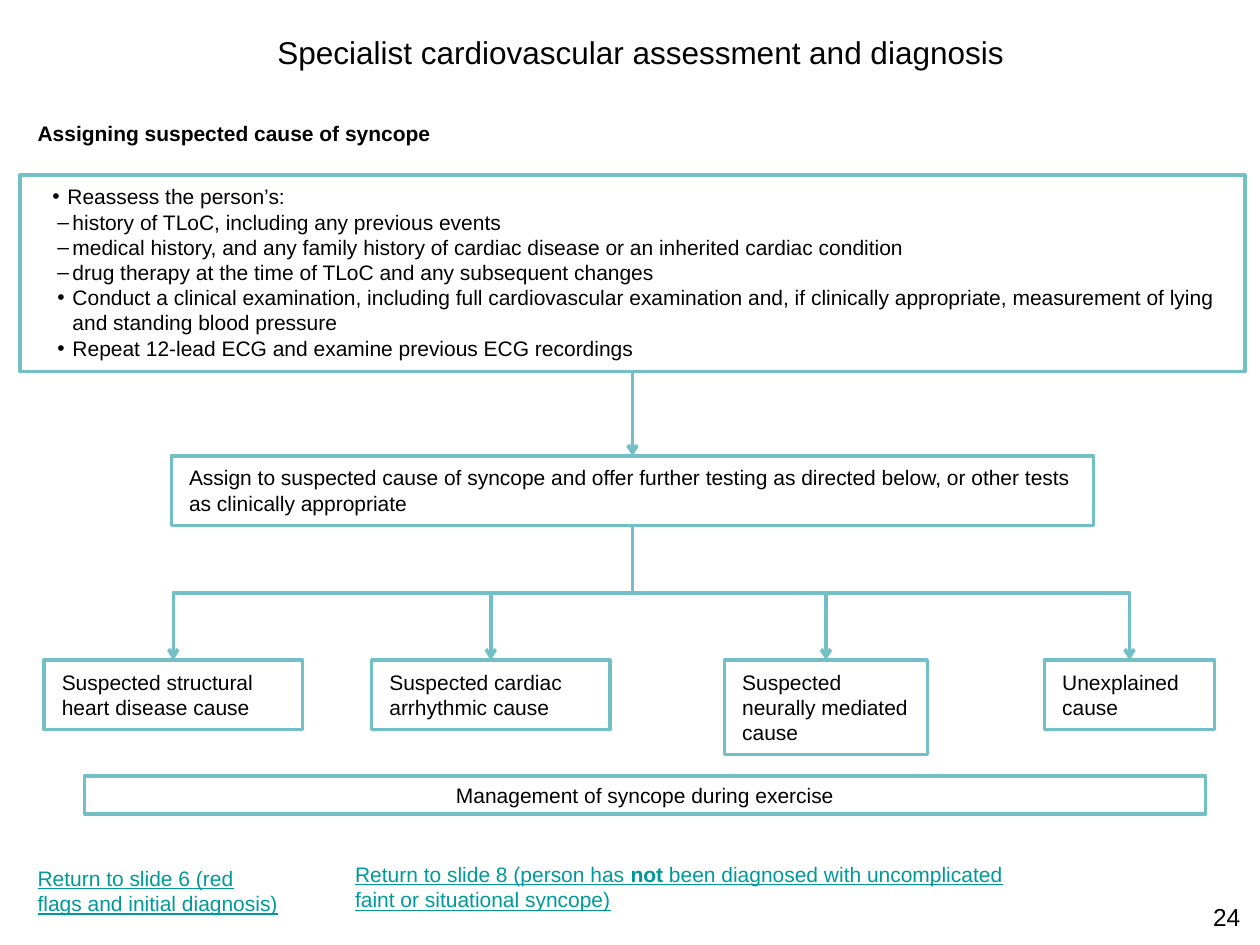
from lxml import etree
from pptx import Presentation
from pptx import util as u
from pptx.dml.color import RGBColor
from pptx.enum import shapes, text
from pptx.oxml.ns import qn

WIDTH, HEIGHT = 10, 7.5
COLORS = {"box": "FFFFFF", "line": "72BFC5", "text": "000000", "link": "009999"}
LINE_WIDTH = 2
WIDE_INSETS = (0.14, 0.07)
THIN_INSETS = (0.1, 0.05)
LEFT, CENTER = text.PP_ALIGN.LEFT, text.PP_ALIGN.CENTER

# Flow chart grid
AXIS = 5.02
LIST_TOP, LIST_HEIGHT = 1.39, 1.56
ASSIGN_TOP, CAUSE_TOP = 3.62, 5.24
TWO_LINES, THREE_LINES = 0.55, 0.75
HANGING = 0.12

STEPS = [
    ("•", 0.235, "Reassess the person’s:"),
    ("–", 0.275, "history of TLoC, including any previous events"),
    ("–", 0.275, "medical history, and any family history of cardiac disease "
                 "or an inherited cardiac condition"),
    ("–", 0.275, "drug therapy at the time of TLoC and any subsequent changes"),
    ("•", 0.275, "Conduct a clinical examination, including full cardiovascular "
                 "examination and, if clinically appropriate, measurement of "
                 "lying and standing blood pressure"),
    ("•", 0.275, "Repeat 12-lead ECG and examine previous ECG recordings"),
]
# left, width, height, wording
CAUSES = [
    (0.35, 2.05, TWO_LINES, "Suspected structural heart disease cause"),
    (2.95, 1.89, TWO_LINES, "Suspected cardiac arrhythmic cause"),
    (5.75, 1.61, THREE_LINES, "Suspected neurally mediated cause"),
    (8.29, 1.35, TWO_LINES, "Unexplained cause"),
]


def rgb(name):
    return RGBColor.from_string(COLORS[name])


def inches(*values):
    return [u.Inches(value) for value in values]


def set_place(shape, place):
    for name, value in zip(("left", "top", "width", "height"), inches(*place)):
        setattr(shape, name, value)


def set_frame(shape, insets):
    across, down = inches(*insets)
    settings = {
        "word_wrap": True,
        "auto_size": text.MSO_AUTO_SIZE.NONE,
        "vertical_anchor": text.MSO_ANCHOR.TOP,
        "margin_left": across,
        "margin_right": across,
        "margin_top": down,
        "margin_bottom": down,
    }
    for name, value in settings.items():
        setattr(shape.text_frame, name, value)


def add_run(paragraph, wording, color="text", size=12, **styles):
    run = paragraph.add_run()
    run.text = wording
    run.font.color.rgb = rgb(color)
    for name, value in {"name": "Arial", "size": u.Pt(size), **styles}.items():
        setattr(run.font, name, value)


def write(shape, runs, align=LEFT, insets=THIN_INSETS, **styles):
    """Fill a shape with one paragraph of (wording, bold) runs."""
    set_frame(shape, insets)
    paragraph = shape.text_frame.paragraphs[0]
    paragraph.alignment = align
    for wording, bold in runs:
        add_run(paragraph, wording, bold=bold, **styles)


def outline(shape):
    shape.fill.solid()
    shape.fill.fore_color.rgb = rgb("box")
    shape.line.color.rgb = rgb("line")
    shape.line.width = u.Pt(LINE_WIDTH)


def add_box(slide, place, wording, **styles):
    box = slide.shapes.add_shape(shapes.MSO_SHAPE.RECTANGLE, *inches(*place))
    box.shadow.inherit = False
    outline(box)
    write(box, [(wording, False)], **styles)


def add_label(slide, place, *runs, **styles):
    write(slide.shapes.add_textbox(*inches(*place)), runs, **styles)


def fill_list(body):
    set_place(body, (0.16, LIST_TOP, 9.72, LIST_HEIGHT))
    outline(body)
    set_frame(body, WIDE_INSETS)
    frame = body.text_frame
    for index, (mark, margin, wording) in enumerate(STEPS):
        paragraph = frame.add_paragraph() if index else frame.paragraphs[0]
        paragraph.space_before = u.Pt(0)
        add_run(paragraph, wording)
        properties = paragraph._p.get_or_add_pPr()
        properties.set("marL", str(u.Inches(margin)))
        properties.set("indent", str(-u.Inches(HANGING)))
        etree.SubElement(properties, qn("a:buFont")).set("typeface", "Arial")
        etree.SubElement(properties, qn("a:buChar")).set("char", mark)


def add_arrow(slide, kind, begin, end):
    arrow = slide.shapes.add_connector(kind, *inches(*begin, *end))
    arrow.line.color.rgb = rgb("line")
    arrow.line.width = u.Pt(LINE_WIDTH)
    etree.SubElement(arrow.line._get_or_add_ln(), qn("a:tailEnd")).set("type", "arrow")
    etree.SubElement(arrow._element.spPr, qn("a:effectLst"))
    return arrow


def add_branch(slide, begin, end):
    """Elbow arrow that leaves downwards: a level elbow turned by a quarter."""
    (x1, y1), (x2, y2) = begin, end
    middle_x, middle_y = (x1 + x2) / 2, (y1 + y2) / 2
    half_width, half_height = (y2 - y1) / 2, abs(x2 - x1) / 2
    arrow = add_arrow(slide, shapes.MSO_CONNECTOR.ELBOW,
                      (middle_x - half_width, middle_y - half_height),
                      (middle_x + half_width, middle_y + half_height))
    transform = arrow._element.spPr.find(qn("a:xfrm"))
    transform.set("rot", str((90 if x2 < x1 else 270) * 60000))
    if x2 > x1:
        transform.set("flipH", "1")


def main():
    presentation = Presentation()
    presentation.slide_width, presentation.slide_height = inches(WIDTH, HEIGHT)
    slide = presentation.slides.add_slide(presentation.slide_layouts[1])
    title, body = slide.placeholders

    set_place(title, (0.83, 0.21, 8.51, 0.4))
    write(title, [("Specialist cardiovascular assessment and diagnosis", False)],
          align=CENTER, size=18)
    add_label(slide, (0.2, 0.91, 4.65, 0.3),
              ("Assigning suspected cause of syncope", True))
    fill_list(body)

    add_box(slide, (1.36, ASSIGN_TOP, 7.32, TWO_LINES),
            "Assign to suspected cause of syncope and offer further testing as "
            "directed below, or other tests as clinically appropriate",
            insets=WIDE_INSETS)
    add_arrow(slide, shapes.MSO_CONNECTOR.STRAIGHT,
              (AXIS, LIST_TOP + LIST_HEIGHT), (AXIS, ASSIGN_TOP))
    for left, width, height, wording in CAUSES:
        add_box(slide, (left, CAUSE_TOP, width, height), wording, insets=WIDE_INSETS)
        add_branch(slide, (AXIS, ASSIGN_TOP + TWO_LINES),
                   (left + width / 2, CAUSE_TOP))
    add_box(slide, (0.67, 6.16, 8.9, 0.3), "Management of syncope during exercise",
            align=CENTER)

    link = {"color": "link", "underline": True}
    add_label(slide, (0.2, 6.82, 2.13, 0.51),
              ("Return to slide 6 (red flags and initial diagnosis)", False), **link)
    add_label(slide, (2.72, 6.79, 5.67, 0.5),
              ("Return to slide 8 (person has ", False), ("not", True),
              (" been diagnosed with uncomplicated faint or situational syncope)",
               False), **link)
    add_label(slide, (0.953 * WIDTH, 7.11, 0.43, 0.34), ("24", False), size=14)
    presentation.save("out.pptx")


if __name__ == "__main__":
    main()
